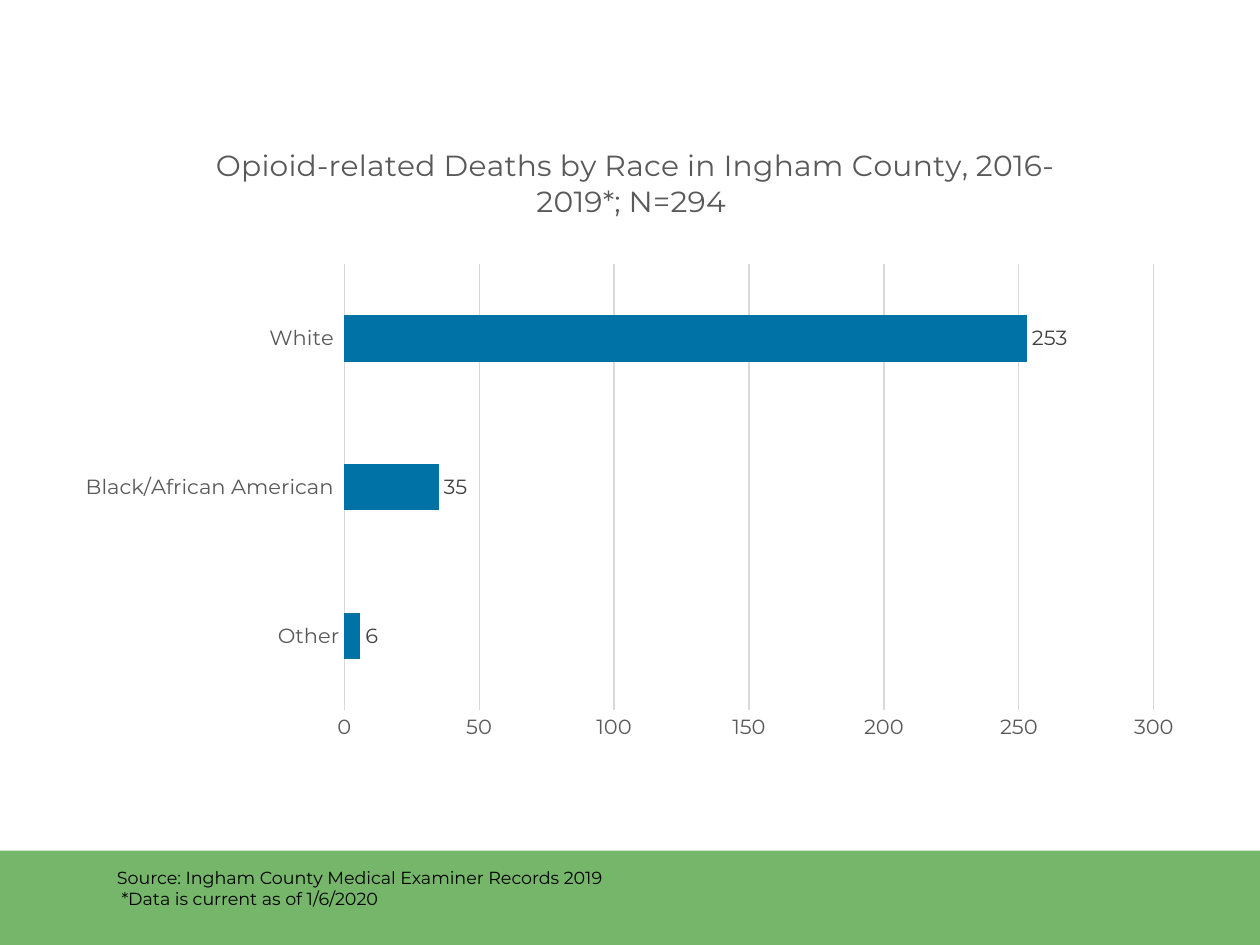
from lxml import etree
from pptx import Presentation
from pptx.chart.data import CategoryChartData
from pptx.dml.color import RGBColor
from pptx.enum.chart import (XL_AXIS_CROSSES, XL_CHART_TYPE, XL_LABEL_POSITION,
                             XL_TICK_MARK)
from pptx.enum.shapes import MSO_SHAPE
from pptx.enum.text import MSO_AUTO_SIZE
from pptx.oxml.ns import qn
from pptx.util import Inches, Pt

COLORS = {"band": "75B66A", "bar": "0072A6", "axis": "595959",
          "label": "404040", "grid": "D9D9D9", "text": "000000"}


def color(name):
    return RGBColor.from_string(COLORS[name])


class SlideBuilder:
    font_name = "Montserrat"

    def __init__(self, page):
        self.page = page

    def style(self, font, size, color_name):
        font.name = self.font_name
        font.size = Pt(size)
        font.bold = False
        font.color.rgb = color(color_name)

    def band(self, left, top, width, height):
        shape = self.page.shapes.add_shape(
            MSO_SHAPE.RECTANGLE, Inches(left), Inches(top), Inches(width), Inches(height))
        shape.shadow.inherit = False
        shape.fill.solid()
        shape.fill.fore_color.rgb = color("band")
        shape.line.fill.background()

    def text(self, left, top, width, height, lines, size):
        box = self.page.shapes.add_textbox(
            Inches(left), Inches(top), Inches(width), Inches(height))
        frame = box.text_frame
        frame.word_wrap = True
        frame.auto_size = MSO_AUTO_SIZE.SHAPE_TO_FIT_TEXT
        frame.text = "\n".join(lines)
        for paragraph in frame.paragraphs:
            for span in paragraph.runs:
                self.style(span.font, size, "text")

    def place(self, parent, **settings):
        """Give a chart part a manual layout, in fractions of the chart."""
        layout = parent.find(qn("c:layout"))
        if layout is None:
            layout = etree.Element(qn("c:layout"))
            before = parent.find(qn("c:tx"))
            parent.insert(0 if before is None else parent.index(before) + 1, layout)
        for child in list(layout):
            layout.remove(child)
        manual = etree.SubElement(layout, qn("c:manualLayout"))
        for name, value in settings.items():
            etree.SubElement(manual, qn(f"c:{name}")).set("val", str(value))

    def bar_chart(self, left, top, width, height, title, categories, values):
        data = CategoryChartData()
        data.categories = categories
        data.add_series("Series 1", values)
        chart = self.page.shapes.add_chart(
            XL_CHART_TYPE.BAR_CLUSTERED, Inches(left), Inches(top),
            Inches(width), Inches(height), data).chart
        self.style(chart.font, 10, "text")
        chart.has_legend = False

        # Title
        chart.has_title = True
        frame = chart.chart_title.text_frame
        frame.text = title
        self.style(frame.paragraphs[0].runs[0].font, 17, "axis")
        chart.chart_title.include_in_layout = False

        # Axes, with the values along the top
        for axis in (chart.category_axis, chart.value_axis):
            axis.major_tick_mark = axis.minor_tick_mark = XL_TICK_MARK.NONE
            self.style(axis.tick_labels.font, 12, "axis")
        chart.category_axis.crosses = XL_AXIS_CROSSES.MAXIMUM
        chart.category_axis.format.line.color.rgb = color("grid")
        chart.category_axis.format.line.width = Pt(0.75)
        value_axis = chart.value_axis
        value_axis.minimum_scale, value_axis.maximum_scale = 0, 300
        value_axis.major_unit = 50
        value_axis.format.line.fill.background()
        value_axis.has_major_gridlines = True
        value_axis.major_gridlines.format.line.color.rgb = color("grid")
        value_axis.major_gridlines.format.line.width = Pt(0.75)

        # Bars and their values
        plot = chart.plots[0]
        plot.gap_width = 219
        plot.vary_by_categories = False
        fill = plot.series[0].format.fill
        fill.solid()
        fill.fore_color.rgb = color("bar")
        plot.has_data_labels = True
        labels = plot.data_labels
        labels.show_value = True
        labels.position = XL_LABEL_POSITION.OUTSIDE_END
        self.style(labels.font, 12, "label")

        # Positions inside the chart
        plot_area = chart.element.find(f".//{qn('c:plotArea')}")
        self.place(plot_area, layoutTarget="inner", xMode="edge", yMode="edge",
                   x=0.248, y=0.244, w=0.714, h=0.736)
        title_part = chart.element.find(f".//{qn('c:title')}")
        self.place(title_part, xMode="edge", yMode="edge", x=0.13, y=0.04)


def main():
    deck = Presentation()
    deck.slide_width, deck.slide_height = Inches(10), Inches(7.5)
    builder = SlideBuilder(deck.slides.add_slide(deck.slide_layouts[6]))

    # Footer band
    builder.band(0, 6.75, 10, 0.75)

    # Deaths by race
    builder.bar_chart(
        0.5, 0.92, 9, 4.95,
        "Opioid-related Deaths by Race in Ingham County, 2016-2019*; N=294 ",
        ["Other", "Black/African American ", "White "], [6, 35, 253])

    # Source note
    builder.text(0.83, 6.83, 8.08, 0.44,
                 ["Source: Ingham County Medical Examiner Records 2019",
                  " *Data is current as of 1/6/2020"], 10)

    deck.save("out.pptx")


if __name__ == "__main__":
    main()
